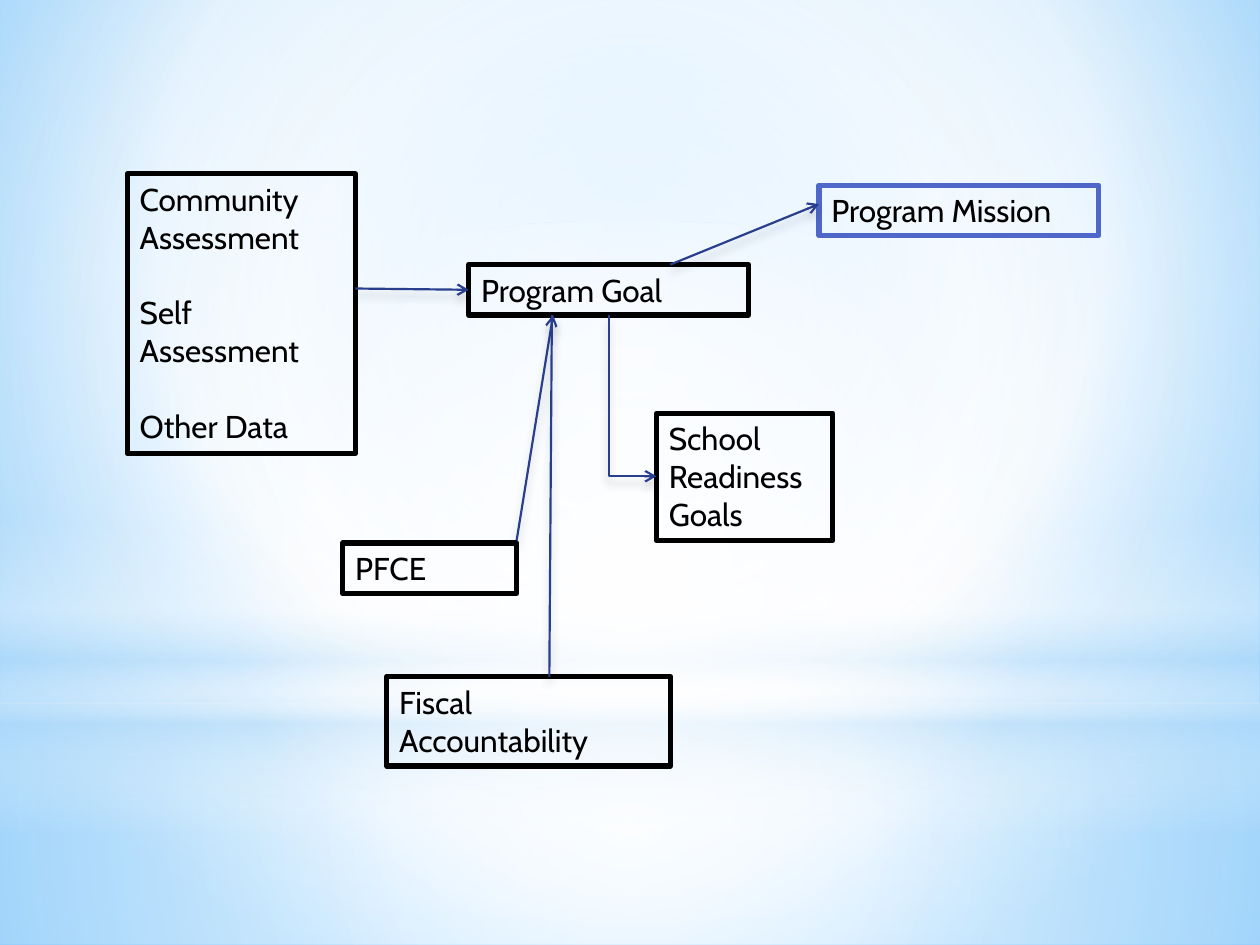
from lxml.etree import SubElement
from pptx import Presentation
from pptx.dml.color import RGBColor
from pptx.enum.shapes import MSO_CONNECTOR, MSO_SHAPE
from pptx.enum.text import MSO_AUTO_SIZE
from pptx.oxml import parse_xml
from pptx.oxml.ns import nsdecls, qn
from pptx.util import Inches, Pt


def colour(hex_string):
    return RGBColor.from_string(hex_string)


def set_gradient(fill, parent, stops, centre=None):
    """Radial gradient around centre (left, top, right, bottom), else top to bottom."""
    fill.solid()
    marks = "".join(
        f'<a:gs pos="{at * 1000}"><a:srgbClr val="{colour(shade)}">'
        f'<a:alpha val="{opacity * 1000}"/></a:srgbClr></a:gs>'
        for at, shade, opacity in stops)
    direction = '<a:lin ang="5400000" scaled="0"/>'
    if centre:
        sides = " ".join(f'{side}="{share * 1000}"' for side, share in zip("ltrb", centre))
        direction = f'<a:path path="circle"><a:fillToRect {sides}/></a:path>'
    parent.replace(parent.find(qn("a:solidFill")), parse_xml(
        f'<a:gradFill {nsdecls("a")} rotWithShape="1"><a:gsLst>{marks}</a:gsLst>'
        f'{direction}</a:gradFill>'))


deck = Presentation()
deck.slide_width, deck.slide_height = Inches(10), Inches(7.5)
slide = deck.slides.add_slide(deck.slide_layouts[6])
shapes = slide.shapes

# Grid of 100 columns by 75 rows
col, row = deck.slide_width / 100, deck.slide_height / 75

# Background: radial blue under four soft layers of light
set_gradient(slide.background.fill, slide.element.find(".//" + qn("p:bgPr")),
             [(0, "9ED5FF", 100), (60, "FFFFFF", 100), (100, "5BB9FF", 100)],
             (20, 10, 20, 60))
middle = (50, 50, 50, 50)
light_layers = [
    (MSO_SHAPE.RECTANGLE, 55.8, 19.2, middle,
     [(0, "FFFFFF", 91), (37, "FFFFFF", 76), (100, "B4DCFA", 79)]),
    (MSO_SHAPE.RECTANGLE, 0, 55.8, middle,
     [(0, "FFFFFF", 89), (48, "FFFFFF", 62), (100, "B4DCFA", 79)]),
    (MSO_SHAPE.RECTANGLE, 41.2, 25, None,
     [(0, "FFFFFF", 0), (29, "FFFFFF", 30), (45, "B4DCFA", 40),
      (55, "FFFFFF", 26), (65, "B4DCFA", 60), (100, "FFFFFF", 0)]),
    (MSO_SHAPE.OVAL, 17.5, 55.8, middle,
     [(0, "FFFFFF", 100), (56, "FFFFFF", 0)]),
]
for outline, top, height, centre, stops in light_layers:
    layer = shapes.add_shape(outline, 0, int(top * row), deck.slide_width, int(height * row))
    layer.shadow.inherit = False
    layer.line.fill.background()
    set_gradient(layer.fill, layer.element.spPr, stops, centre)

# Boxes: left, top, width, height, border, paragraphs
BLACK, BLUE, NAVY = "000000", "4E67C8", "2A3E8E"
planning_boxes = [
    (37.2, 21, 22.2, 4, BLACK, ["Program Goal"]),
    (10.1, 13.8, 18.1, 22.2, BLACK,
     ["Community Assessment", "Self Assessment", "Other Data"]),
    (65, 14.7, 22.2, 4, BLUE, ["Program Mission"]),
    (52.1, 32.8, 14, 10.1, BLACK, ["School Readiness Goals"]),
    (27.2, 43.1, 13.8, 4, BLACK, ["PFCE"]),
    (30.7, 53.7, 22.5, 7.1, BLACK, ["Fiscal Accountability"]),
]
box_of = {}
for left, top, width, height, border, lines in planning_boxes:
    box = shapes.add_textbox(int(left * col), int(top * row),
                             int(width * col), int(height * row))
    box.line.color.rgb = colour(border)
    box.line.width = Pt(3)
    frame = box.text_frame
    frame.word_wrap = True
    frame.auto_size = MSO_AUTO_SIZE.SHAPE_TO_FIT_TEXT
    for number, line in enumerate(lines):
        paragraph = frame.add_paragraph() if number else frame.paragraphs[0]
        if number:
            paragraph.space_before = Pt(21.6)
        run = paragraph.add_run()
        run.text = line
        run.font.name = "Cabin"
        run.font.size = Pt(18)
        run.font.color.rgb = colour(BLACK)
    box_of[lines[0]] = box

# Links: kind, start, end, arrowhead
STRAIGHT, ELBOW = MSO_CONNECTOR.STRAIGHT, MSO_CONNECTOR.ELBOW
links = [
    (STRAIGHT, (53.2, 21), (65, 16.2), True),      # goal to mission
    (STRAIGHT, (28.2, 22.9), (37.2, 23), True),    # assessments to goal
    (ELBOW, (56.6, 29.5), (43.8, 33.3), True),     # goal to readiness, before its turn
    (STRAIGHT, (41, 42.9), (43.9, 25), True),      # PFCE to goal
    (STRAIGHT, (43.6, 53.7), (43.8, 25), False),   # fiscal to goal
]
for kind, (x1, y1), (x2, y2), arrowhead in links:
    link = shapes.add_connector(kind, int(x1 * col), int(y1 * row),
                                int(x2 * col), int(y2 * row))
    link.line.color.rgb = colour(NAVY)
    link.line.width = Pt(1.25)
    properties = link._element.spPr
    if arrowhead:
        SubElement(properties.find(qn("a:ln")), qn("a:tailEnd"), type="arrow")
    properties.append(parse_xml(
        f'<a:effectLst {nsdecls("a")}><a:outerShdw blurRad="{Pt(5)}" dist="{Pt(4)}" '
        f'dir="5400000"><a:srgbClr val="{BLACK}"><a:alpha val="20000"/></a:srgbClr>'
        f'</a:outerShdw></a:effectLst>'))
    if kind == ELBOW:
        # One bend, turned to run down and then right
        properties.find(qn("a:prstGeom")).set("prst", "bentConnector2")
        properties.find(qn("a:xfrm")).set("rot", str(270 * 60000))
    if (x2, y2) == (37.2, 23):
        link.end_connect(box_of["Program Goal"], 1)

deck.save("out.pptx")
